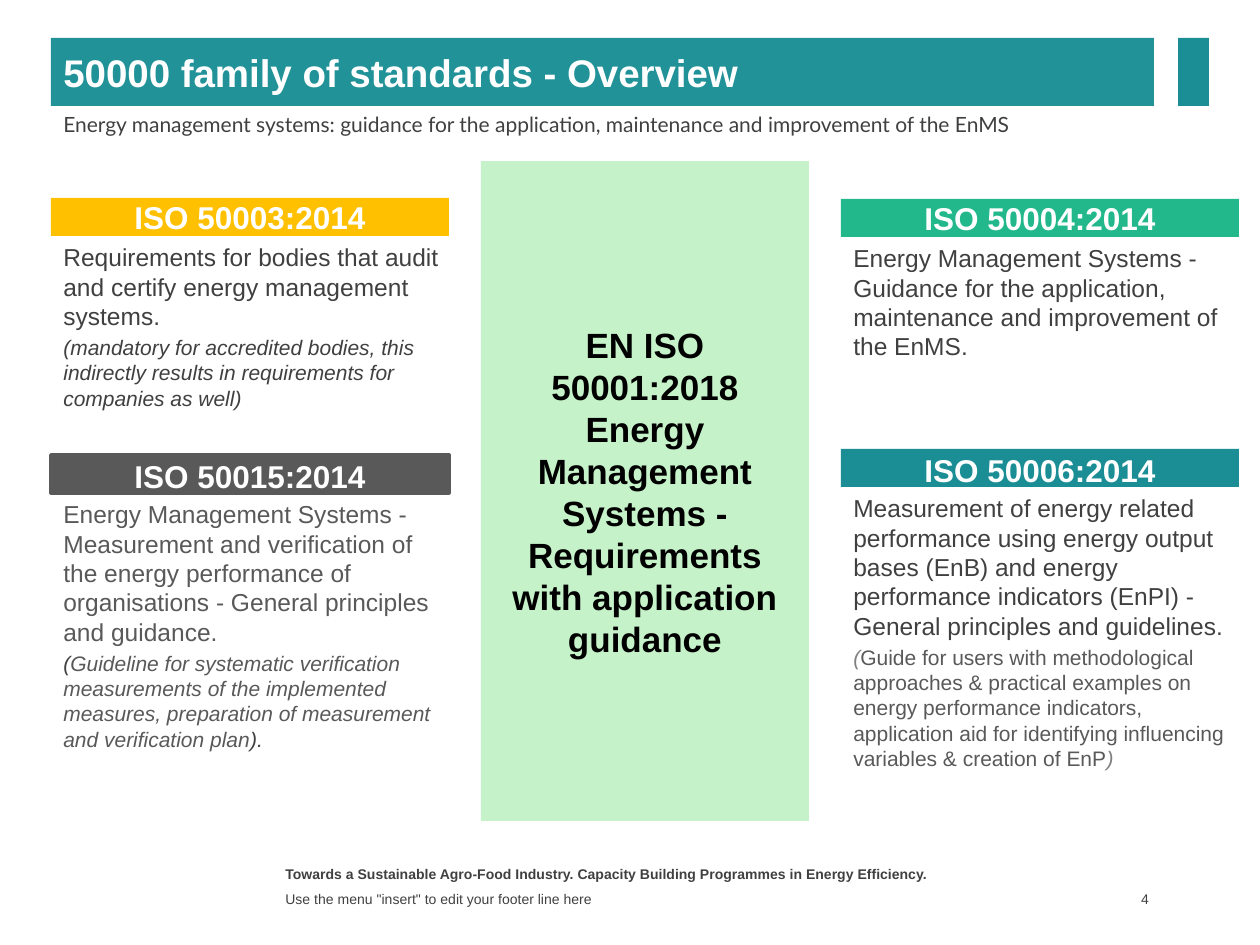
import pptx
import pptx.util
import pptx.dml.color
import pptx.enum.shapes
import pptx.enum.text

PX_PER_INCH = 126
COLORS = {
    "title": "209298", "teal": "1B8E95", "yellow": "FFC000", "green": "22B88B",
    "mint": "C6F2C9", "white": "FFFFFF", "black": "000000",
    "text": "404040", "gray": "595959", "pale": "808080",
}
ALIGN = pptx.enum.text.PP_ALIGN
ANCHOR = pptx.enum.text.MSO_ANCHOR


def px(length):
    return pptx.util.Emu(round(length * 914400 / PX_PER_INCH))


def rgb(color):
    return pptx.dml.color.RGBColor.from_string(COLORS[color])


class SlideStyle:
    def __init__(self, slide):
        self.slide = slide

    def bar(self, box, color, line=None):
        shape = self.slide.shapes.add_shape(
            pptx.enum.shapes.MSO_SHAPE.RECTANGLE, *map(px, box))
        shape.shadow.inherit = False
        shape.fill.solid()
        shape.fill.fore_color.rgb = rgb(color)
        if line:
            shape.line.color.rgb = rgb(color)
            shape.line.width = pptx.util.Pt(line)
        else:
            shape.line.fill.background()
        return shape

    def text_box(self, box, anchor=ANCHOR.TOP):
        frame = self.slide.shapes.add_textbox(*map(px, box)).text_frame
        frame.word_wrap = True
        frame.vertical_anchor = anchor
        return frame

    def set_text(self, paragraph, text, size, color="text", bold=False,
                 italic=False, align=ALIGN.LEFT, font="Arial"):
        paragraph.text = text
        paragraph.alignment = align
        paragraph.font.name = font
        paragraph.font.size = pptx.util.Pt(size)
        paragraph.font.bold = bold
        paragraph.font.italic = italic
        paragraph.font.color.rgb = rgb(color)

    def note(self, paragraph, parts):
        """Smaller remark whose parts are (text, color, italic)."""
        self.set_text(paragraph, "", 12)
        paragraph.space_before = pptx.util.Pt(2.4)
        for text, color, italic in parts:
            run = paragraph.add_run()
            run.text = text
            run.font.italic = italic
            run.font.color.rgb = rgb(color)

    def card(self, left, top, label_rise, body_height, standard, color, summary,
             summary_color="text", remark=(), line=None):
        self.bar((left, top, 398, 38), color, line)
        label = self.text_box((left, top - label_rise, 398, 50))
        self.set_text(label.paragraphs[0], standard, 18, "white", bold=True,
                      align=ALIGN.CENTER)
        body = self.text_box((left, top + 38, 404, body_height))
        self.set_text(body.paragraphs[0], summary, 14, summary_color)
        if remark:
            self.note(body.add_paragraph(), remark)


def main():
    deck = pptx.Presentation()
    deck.slide_width, deck.slide_height = px(1260), px(945)
    style = SlideStyle(deck.slides.add_slide(deck.slide_layouts[6]))

    # Title and subtitle
    title = style.bar((51, 38, 1103, 68), "title").text_frame
    title.word_wrap = True
    title.vertical_anchor = ANCHOR.MIDDLE
    style.set_text(title.paragraphs[0], "50000 family of standards - Overview",
                   22, "white", bold=True)
    style.bar((1178, 38, 31, 68), "teal")
    subtitle = style.text_box((51, 105, 1147, 38))
    style.set_text(subtitle.paragraphs[0],
                   "Energy management systems: guidance for the application, "
                   "maintenance and improvement of the EnMS", 12, font="Lato")

    # Central standard
    core = style.bar((481, 161, 328, 660), "mint").text_frame
    core.word_wrap = True
    core.vertical_anchor = ANCHOR.MIDDLE
    core.margin_left = core.margin_right = px(10)
    style.set_text(core.paragraphs[0],
                   "EN ISO 50001:2018\vEnergy Management Systems - "
                   "Requirements with application guidance",
                   20, "black", bold=True, align=ALIGN.CENTER)

    # Supporting standards
    left, right = 51, 841
    style.card(left, 198, 6, 183, "ISO 50003:2014", "yellow",
               "Requirements for bodies that audit and certify energy "
               "management systems.",
               remark=[("(mandatory for accredited bodies, this indirectly "
                        "results in requirements for companies as well)",
                        "text", True)])
    style.card(left, 455, 4, 304, "ISO 50015:2014", "gray",
               "Energy Management Systems - Measurement and verification of "
               "the energy performance of organisations - General principles "
               "and guidance.", summary_color="gray", line=2,
               remark=[("(", "text", True),
                       ("Guideline for systematic verification measurements of "
                        "the implemented measures, preparation of measurement "
                        "and verification plan", "gray", True),
                       (").", "text", True)])
    style.card(right, 199, 6, 131, "ISO 50004:2014", "green",
               "Energy Management Systems - Guidance for the application, "
               "maintenance and improvement of the EnMS.")
    style.card(right, 449, 4, 329, "ISO 50006:2014", "teal",
               "Measurement of energy related performance using energy output "
               "bases (EnB) and energy performance indicators (EnPI) - General "
               "principles and guidelines.",
               remark=[("(", "pale", True),
                       ("Guide for users with methodological approaches & "
                        "practical examples on energy performance indicators, "
                        "application aid for identifying influencing variables "
                        "& creation of EnP", "gray", False),
                       (")", "pale", True)])

    # Footer
    programme = style.text_box((273, 859, 693, 26))
    style.set_text(programme.paragraphs[0],
                   "Towards a Sustainable Agro-Food Industry. Capacity "
                   "Building Programmes in Energy Efficiency.", 8, bold=True)
    footer = style.text_box((273, 887, 693, 24), ANCHOR.MIDDLE)
    style.set_text(footer.paragraphs[0],
                   'Use the menu "insert" to edit your footer line here', 8)
    page = style.text_box((1084, 886, 70, 25), ANCHOR.MIDDLE)
    page.margin_right = px(5)
    style.set_text(page.paragraphs[0], "4", 8, align=ALIGN.RIGHT)

    deck.save("out.pptx")


if __name__ == "__main__":
    main()
